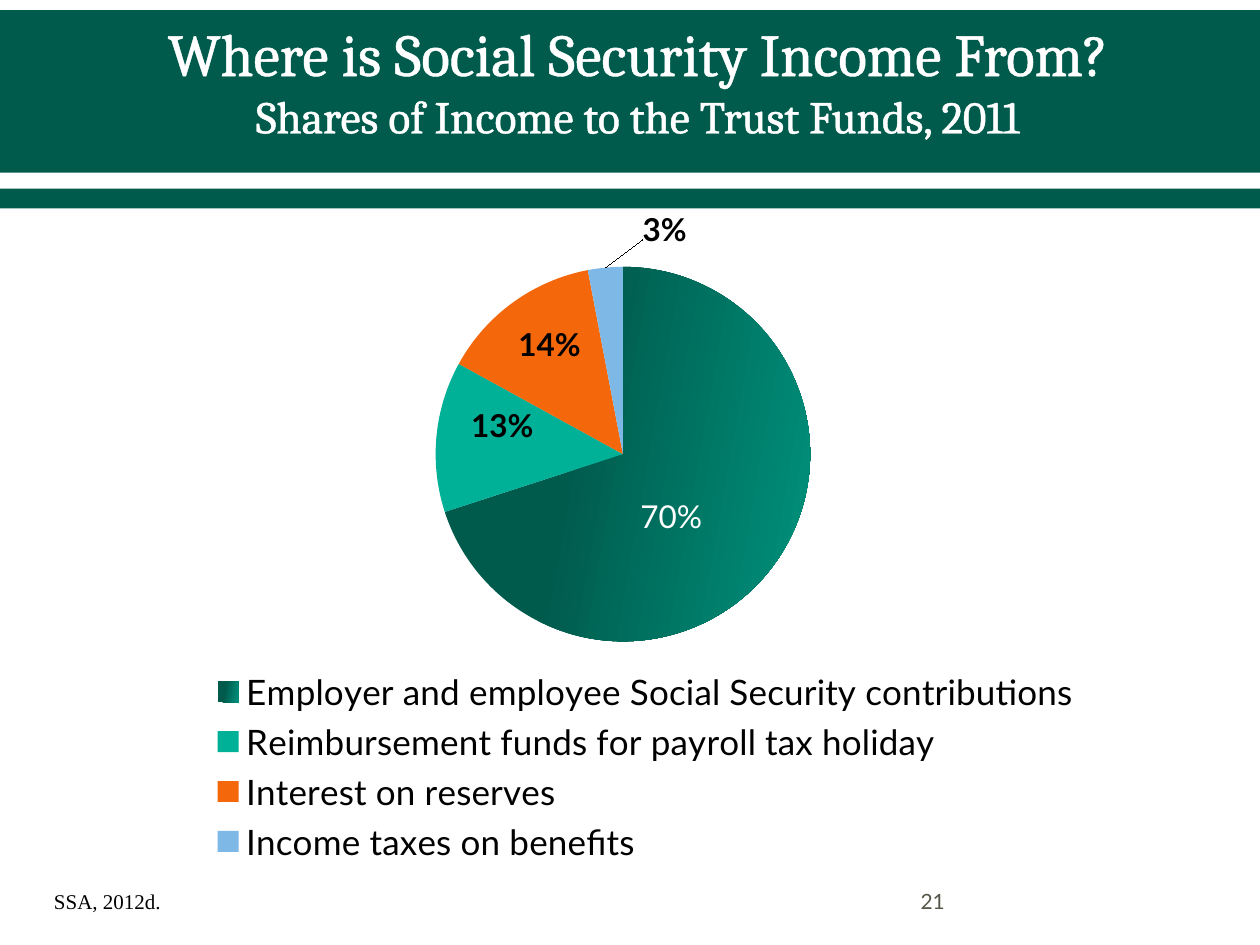
import pptx
import pptx.chart.data
import pptx.dml.color
import pptx.enum.chart
import pptx.enum.shapes
import pptx.enum.text
import pptx.oxml
import pptx.oxml.ns
import pptx.util

GREEN, WHITE, BLACK = "005B4D", "FFFFFF", "000000"
NS = pptx.oxml.ns.nsdecls("a", "c")
SHARES = [
    ("Employer and employee Social Security contributions", 0.7, GREEN),
    ("Reimbursement funds for payroll tax holiday", 0.13, "00B097"),
    ("Interest on reserves", 0.14, "F4680B"),
    ("Income taxes on benefits", 0.03, "7EB8E7"),
]
LABEL_SHIFTS = [(-0.03, 0.01), (-0.03, -0.03), (-0.02, -0.05), (0.09, -0.03)]


def rgb(value):
    """Turn a hex string into a colour."""
    return pptx.dml.color.RGBColor.from_string(value)


def place(prs, box):
    """Turn a box in percent of the slide into lengths."""
    sides = (prs.slide_width, prs.slide_height) * 2
    return [round(side * share / 100) for side, share in zip(sides, box)]


def style_font(font, size, color=BLACK, name="Lato", bold=False):
    """Set the main properties of a font."""
    font.size, font.name, font.bold = pptx.util.Pt(size), name, bold
    font.color.rgb = rgb(color)


def add_run(p, text, outline=None, **style):
    """Add formatted text to a paragraph."""
    r = p.add_run()
    r.text = text
    style_font(r.font, **style)
    if outline:
        r.font._element.insert(0, pptx.oxml.parse_xml(
            f'<a:ln {NS} w="13970"><a:solidFill><a:srgbClr val="{outline}"/></a:solidFill></a:ln>'))


def add_text(prs, s, box, lines, align="LEFT", anchor="MIDDLE", wrap=True):
    """Place a text box whose lines are pairs of text and format."""
    tf = s.shapes.add_textbox(*place(prs, box)).text_frame
    tf.word_wrap = wrap
    tf.vertical_anchor = pptx.enum.text.MSO_ANCHOR[anchor]
    p = tf.paragraphs[0]
    p.alignment = pptx.enum.text.PP_ALIGN[align]
    for i, (text, style) in enumerate(lines):
        if i:
            p.add_line_break()
        add_run(p, text, **style)


def add_header(prs, s, box):
    """Draw the green bands and the title within a box."""
    left, top, width, height = box
    for start, share in ((0, 80), (90, 10), (2, 80)):
        band = (left, top + height * start / 100, width, height * share / 100)
        sp = s.shapes.add_shape(pptx.enum.shapes.MSO_SHAPE.RECTANGLE, *place(prs, band))
        sp.shadow.inherit = False
        sp.fill.solid()
        sp.fill.fore_color.rgb = rgb(GREEN)
        sp.line.fill.background()
    style = dict(color=WHITE, name="Cambria", outline=WHITE)
    add_text(prs, s, (left + 4, top - 0.94, width - 6.7, height * 0.79), [
        ("Where is Social Security Income From?", dict(size=34, **style)),
        ("Shares of Income to the Trust Funds, 2011", dict(size=26, **style)),
    ], align="CENTER")


def layout(x, y, w=None, h=None, edge=True):
    """Build a manual layout in shares of the chart."""
    parts = '<c:layoutTarget val="inner"/>' if w and not edge else ""
    if w:
        parts += '<c:xMode val="edge"/><c:yMode val="edge"/>'
    parts += f'<c:x val="{x}"/><c:y val="{y}"/>'
    if w:
        parts += f'<c:w val="{w}"/><c:h val="{h}"/>'
    return pptx.oxml.parse_xml(
        f"<c:layout {NS}><c:manualLayout>{parts}</c:manualLayout></c:layout>")


def set_layout(element, new, index):
    """Replace the layout of a chart part."""
    for old in element.findall(pptx.oxml.ns.qn("c:layout")):
        element.remove(old)
    element.insert(index, new)


def fill_gradient(point):
    """Fill a slice with the three-stop green gradient."""
    stops = "".join(f'<a:gs pos="{pos}000"><a:srgbClr val="{color}"/></a:gs>'
                    for pos, color in ((0, GREEN), (36, GREEN), (100, "00927D")))
    point.format.fill.background()
    sppr = point.format.fill._xPr
    sppr.replace(sppr[0], pptx.oxml.parse_xml(
        f'<a:gradFill {NS}><a:gsLst>{stops}</a:gsLst><a:lin ang="600000" scaled="0"/></a:gradFill>'))


def add_pie(prs, s, box):
    """Draw the pie of income shares with its legend."""
    data = pptx.chart.data.CategoryChartData(number_format="0%")
    data.categories = [name for name, _, _ in SHARES]
    data.add_series("Series 1", [share for _, share, _ in SHARES])
    chart = s.shapes.add_chart(
        pptx.enum.chart.XL_CHART_TYPE.PIE, *place(prs, box), data).chart
    chart.has_title = False
    style_font(chart.font, 10)
    chart.has_legend = True
    chart.legend.position = pptx.enum.chart.XL_LEGEND_POSITION.BOTTOM
    chart.legend.include_in_layout = False
    style_font(chart.legend.font, 20)
    set_layout(chart.legend._element, layout(0.02, 0.66, 0.96, 0.3), 1)
    plot = chart.plots[0]
    plot.vary_by_categories = True
    set_layout(plot._element.getparent(), layout(0.27, 0.08, 0.41, 0.55, edge=False), 0)

    series = plot.series[0]
    labels = series.data_labels
    labels.show_value = True
    labels.number_format, labels.number_format_is_linked = "0%", False
    style_font(labels.font, 18, bold=True)
    positions = pptx.enum.chart.XL_LABEL_POSITION
    for i, (_, share, color) in enumerate(SHARES):
        point = series.points[i]
        label = point.data_label
        if i:
            point.format.fill.solid()
            point.format.fill.fore_color.rgb = rgb(color)
            style_font(label.font, 18, bold=True)
        else:
            fill_gradient(point)
            add_run(label.text_frame.paragraphs[0], f"{share:.0%}", size=18, color=WHITE)
        label.position = positions.CENTER if share > 0.1 else positions.OUTSIDE_END
        set_layout(labels._element.findall(pptx.oxml.ns.qn("c:dLbl"))[i],
                   layout(*LABEL_SHIFTS[i]), 1)
    for old in labels._element.findall(pptx.oxml.ns.qn("c:showLeaderLines")):
        labels._element.remove(old)
    labels._element.append(pptx.oxml.parse_xml(f'<c:showLeaderLines {NS} val="1"/>'))


def add_footer(prs, s, box):
    """Place the source and the page number within a box."""
    left, top, width, height = box
    add_text(prs, s, (left + width * 0.75, top, width * 0.25, height),
             [("21", dict(size=12, color="55554A"))])
    add_text(prs, s, (left, top + 0.66, width * 0.12, height * 0.75),
             [("SSA, 2012d.", dict(size=12, name="Times New Roman"))],
             anchor="TOP", wrap=False)


def main():
    """Build the slide and save it."""
    prs = pptx.Presentation()
    prs.slide_width, prs.slide_height = pptx.util.Inches(10), pptx.util.Inches(7.5)
    s = prs.slides.add_slide(prs.slide_layouts[6])
    add_header(prs, s, (0, 1.07, 100, 21))
    add_pie(prs, s, (15, 22.27, 72.5, 72.67))
    add_footer(prs, s, (3.3, 92.67, 91.7, 5.33))
    prs.save("out.pptx")


if __name__ == "__main__":
    main()
